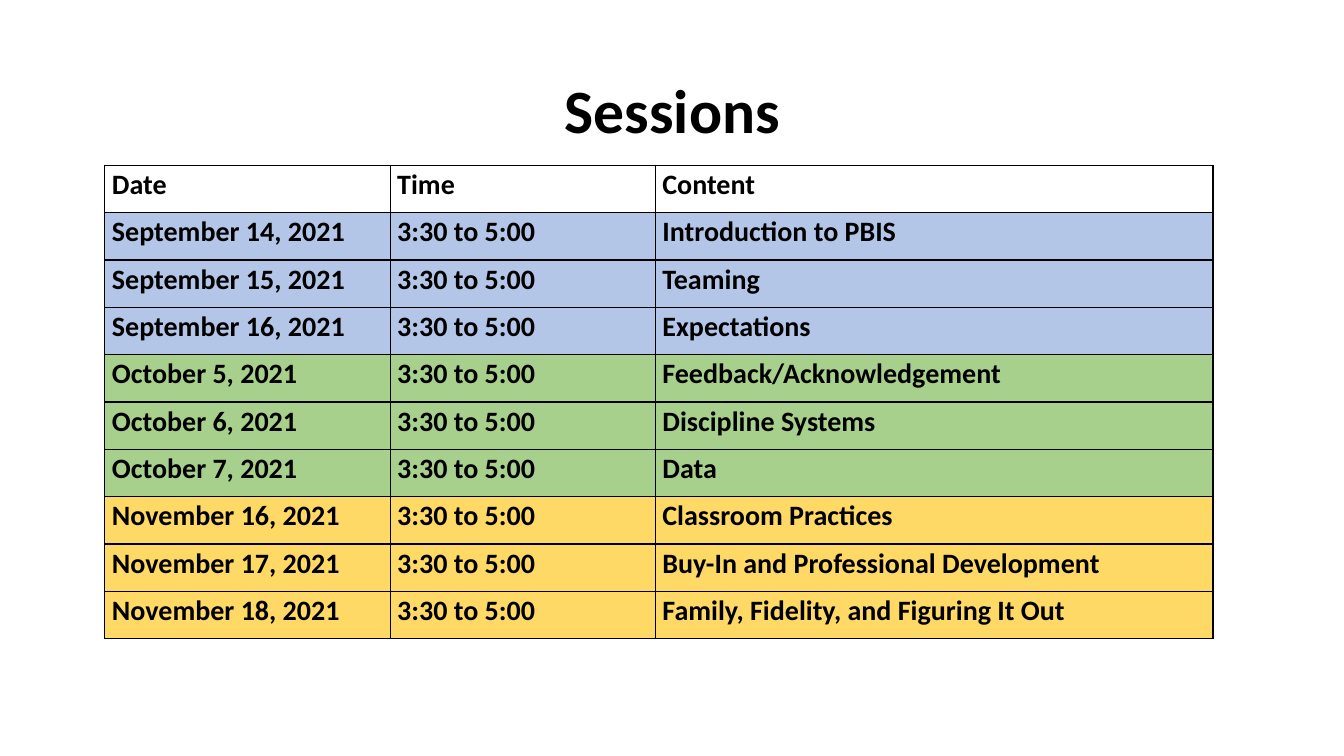
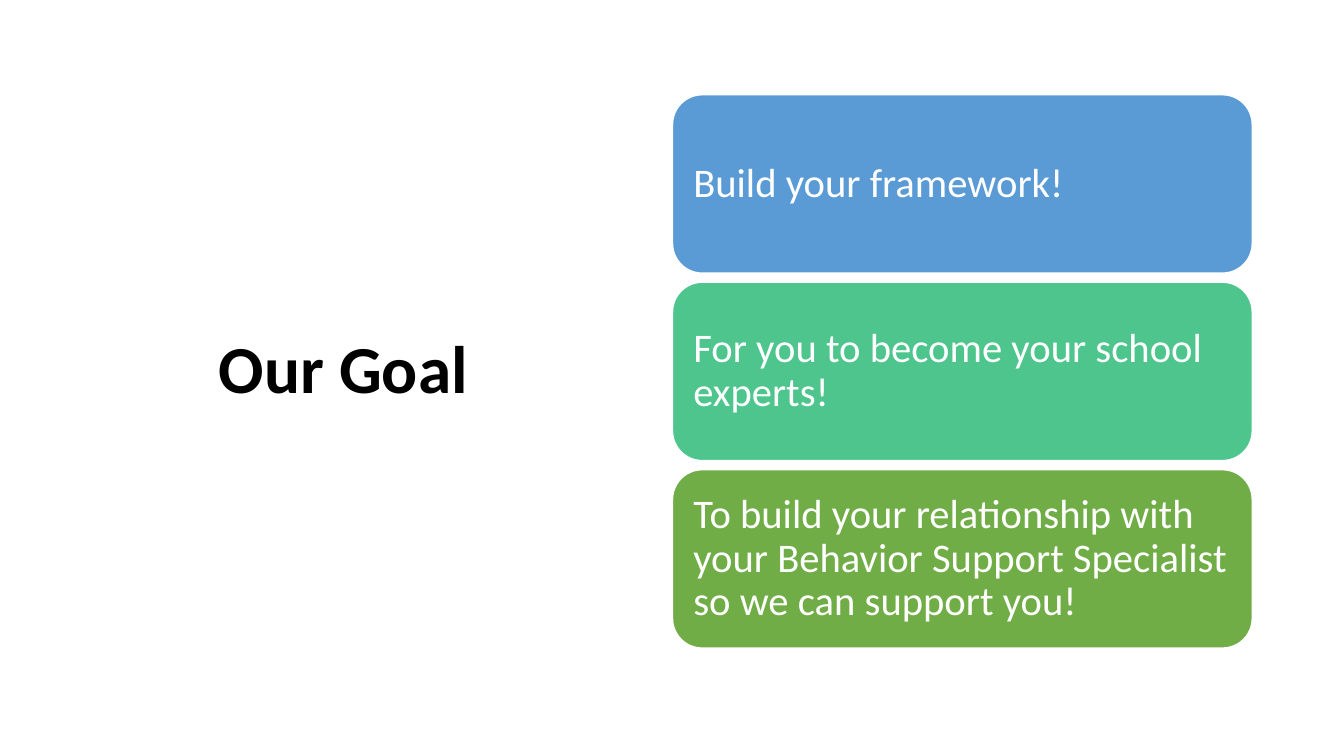
from lxml.etree import SubElement
from pptx import Presentation
from pptx.dml.color import RGBColor
from pptx.enum.shapes import MSO_SHAPE
from pptx.enum.text import MSO_ANCHOR, MSO_AUTO_SIZE, PP_ALIGN
from pptx.oxml.ns import qn
from pptx.util import Inches, Pt

BLACK = RGBColor(0x00, 0x00, 0x00)
WHITE = RGBColor(0xFF, 0xFF, 0xFF)
PALE = RGBColor(0xB4, 0xC6, 0xE7)
LEAF = RGBColor(0xA8, 0xD0, 0x8D)
GOLD = RGBColor(0xFF, 0xD9, 0x66)
BLUE = RGBColor(0x5B, 0x9B, 0xD5)
MINT = RGBColor(0x4D, 0xC5, 0x8D)
GREEN = RGBColor(0x70, 0xAD, 0x47)
FONT = "Calibri"
HOURS = "3:30 to 5:00"

MONTHS = [
    (PALE, [("September 14, 2021", "Introduction to PBIS"),
            ("September 15, 2021", "Teaming"),
            ("September 16, 2021", "Expectations")]),
    (LEAF, [("October 5, 2021", "Feedback/Acknowledgement"),
            ("October 6, 2021", "Discipline Systems"),
            ("October 7, 2021", "Data")]),
    (GOLD, [("November 16, 2021", "Classroom Practices"),
            ("November 17, 2021", "Buy-In and Professional Development"),
            ("November 18, 2021", "Family, Fidelity, and Figuring It Out")]),
]
GOALS = [
    (BLUE, "Build your framework!"),
    (MINT, "For you to become your school experts!"),
    (GREEN, "To build your relationship with your Behavior Support Specialist "
            "so we can support you!"),
]


class Deck:
    """Holds the shared style and the current slide."""

    def __init__(self):
        self.show = Presentation()
        self.show.slide_width = Inches(13.33)
        self.show.slide_height = Inches(7.5)
        self.slide = None

    def label(self, frame, text, size, color, bold, space, align=PP_ALIGN.LEFT):
        """Fill a text frame with one styled paragraph."""
        frame.word_wrap = True
        frame.text = text
        para = frame.paragraphs[0]
        para.alignment = align
        para.line_spacing = space
        font = para.font
        font.name, font.size, font.bold = FONT, Pt(size), bold
        font.color.rgb = color

    def page(self, title, left, top, width, height, size):
        """Start a slide with a centred title."""
        self.slide = self.show.slides.add_slide(self.show.slide_layouts[5])
        head = self.slide.shapes.title
        head.left, head.top = Inches(left), Inches(top)
        head.width, head.height = Inches(width), Inches(height)
        frame = head.text_frame
        frame.auto_size = MSO_AUTO_SIZE.NONE
        frame.vertical_anchor = MSO_ANCHOR.MIDDLE
        self.label(frame, title, size, BLACK, True, 0.9, PP_ALIGN.CENTER)

    def border(self, cell):
        """Draw a thin black line on each side of a cell."""
        props = cell._tc.get_or_add_tcPr()
        for side in ("lnL", "lnR", "lnT", "lnB"):
            line = SubElement(props, qn(f"a:{side}"), w=str(Pt(1)))
            fill = SubElement(line, qn("a:solidFill"))
            SubElement(fill, qn("a:srgbClr"), val=str(BLACK))

    def table(self, rows, left, top, widths, height):
        """Add a bordered table from (fill, texts) rows."""
        frame = self.slide.shapes.add_table(
            len(rows), len(widths), Inches(left), Inches(top),
            Inches(sum(widths)), Inches(height * len(rows)))
        grid = frame.table
        grid.first_row = grid.horz_banding = False
        for col, width in zip(grid.columns, widths):
            col.width = Inches(width)
        for row, (color, texts) in zip(grid.rows, rows):
            for cell, text in zip(row.cells, texts):
                cell.margin_left = cell.margin_right = Inches(0.07)
                cell.margin_top = cell.margin_bottom = 0
                self.border(cell)
                if color is None:
                    cell.fill.background()
                else:
                    cell.fill.solid()
                    cell.fill.fore_color.rgb = color
                self.label(cell.text_frame, text, 20, BLACK, True, 1.07)

    def card(self, text, color, left, top, width, height):
        """Add a rounded box with left-aligned white text."""
        box = self.slide.shapes.add_shape(
            MSO_SHAPE.ROUNDED_RECTANGLE, Inches(left), Inches(top),
            Inches(width), Inches(height))
        box.shadow.inherit = False
        box.fill.solid()
        box.fill.fore_color.rgb = color
        box.line.color.rgb = WHITE
        box.line.width = Pt(1)
        frame = box.text_frame
        frame.vertical_anchor = MSO_ANCHOR.MIDDLE
        frame.margin_left = frame.margin_right = Inches(0.12)
        frame.margin_top = frame.margin_bottom = Inches(0.12)
        self.label(frame, text, 29, WHITE, False, 0.9)


def main():
    """Build and save both slides."""
    deck = Deck()

    deck.page("Sessions", 0.92, 0.4, 11.5, 1.45, 44)
    rows = [(None, ("Date", "Time", "Content"))]
    rows += [(color, (date, HOURS, topic))
             for color, days in MONTHS for date, topic in days]
    deck.table(rows, 1.04, 1.64, (2.83, 2.63, 5.53), 0.47)

    deck.page("Our Goal", 0.57, 0.68, 5.67, 6.02, 48)
    tall, gap = 1.77, 0.09
    for i, (color, text) in enumerate(GOALS):
        deck.card(text, color, 6.67, 0.94 + i * (tall + gap), 5.75, tall)

    deck.show.save("out.pptx")


if __name__ == "__main__":
    main()
